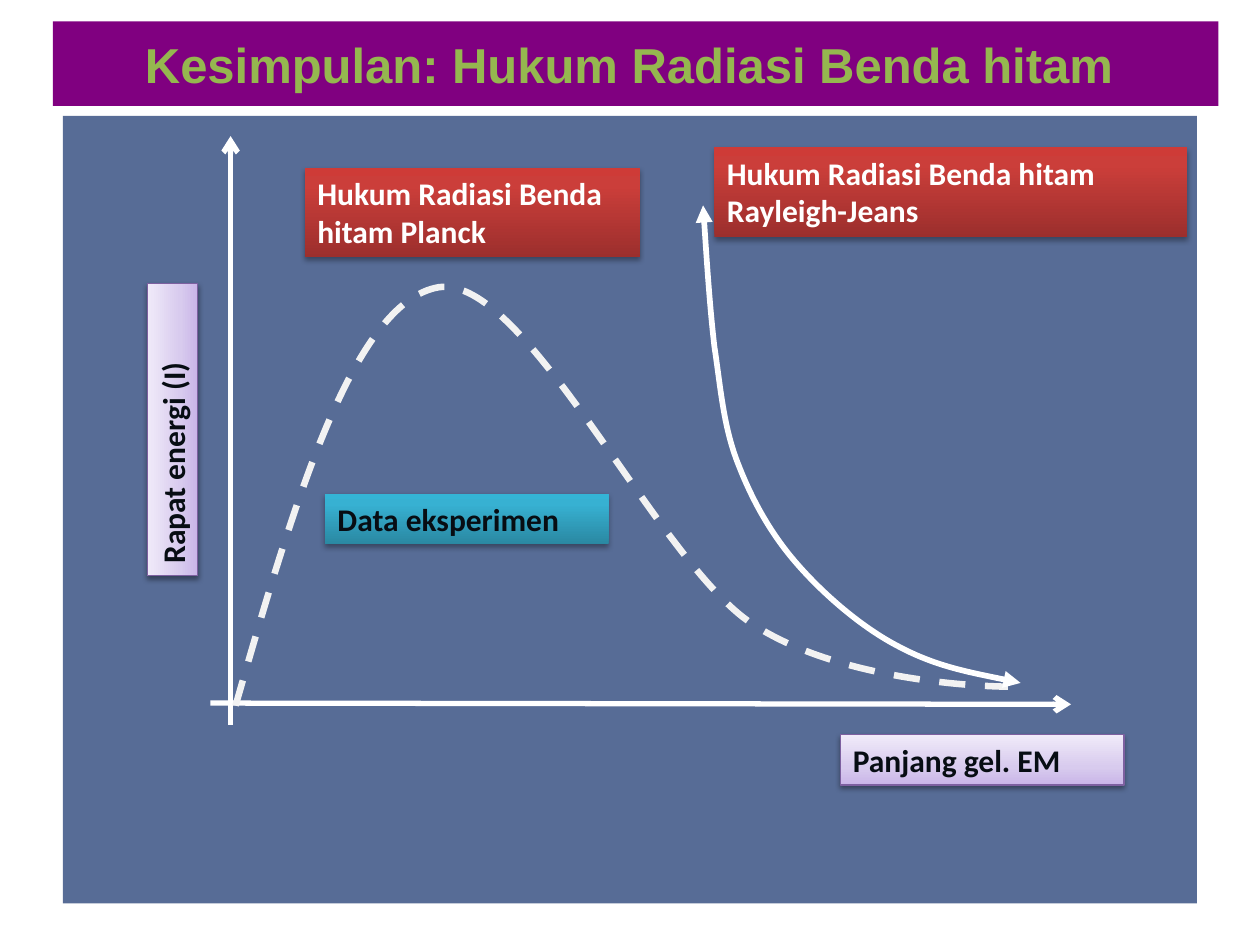
from pptx import Presentation, util as u
from pptx.dml.color import RGBColor
from pptx.enum import dml, shapes, text
from pptx.oxml.ns import qn
from lxml import etree

THEME = {
    "panel": "002060",
    "title_fill": "800080",
    "title_text": "95B74F",
    "white": "FFFFFF",
    "planck": "F2F2F2",
    "label_font": "Calibri",
    "title_font": "Arial",
    "label_size": 18,
    "title_size": 28,
}
RED = {"stops": [(0, "9C2F2D"), (80, "CB3E3A"), (100, "CE3B37")],
       "text": "FFFFFF", "outline": None, "shadow": (35, 1.8)}
TEAL = {"stops": [(0, "2A88A2"), (80, "37B1D2"), (100, "34B4D6")],
        "text": "070D13", "outline": None, "shadow": (35, 1.8)}
LILAC = {"stops": [(0, "C9B5E8"), (35, "D8CBEE"), (100, "F0EAF9")],
         "text": "070D13", "outline": "7D60A0", "shadow": (38, 1.6)}

TITLE = "Kesimpulan: Hukum Radiasi Benda hitam "
LABELS = [
    ("Hukum Radiasi Benda hitam Rayleigh-Jeans", (5.67, 1.17, 3.75, 0.71), RED, 0),
    ("Hukum Radiasi Benda hitam Planck", (2.42, 1.33, 2.66, 0.71), RED, 0),
    ("Data eksperimen", (2.58, 3.92, 2.25, 0.4), TEAL, 0),
    ("Panjang gel. EM", (6.67, 5.83, 2.25, 0.4), LILAC, 0),
    ("Rapat energi (I)", (0.21, 3.21, 2.32, 0.4), LILAC, 270),
]
AXES = [((1.67, 5.58), (8.5, 5.59)), ((1.83, 5.75), (1.83, 1.08))]
PLANCK_CURVE = (1.87, 5.6), [
    ((2.33, 4), (2.8, 2.4), (3.48, 2.28)),
    ((4.16, 2.17), (5.19, 4.4), (5.94, 4.93)),
    ((6.69, 5.45), (8, 5.45), (8, 5.45)),
]
RAYLEIGH_JEANS_CURVE = (8.1, 5.42), [
    ((7.77, 5.35), (7.43, 5.29), (7.13, 5.13)),
    ((6.84, 4.98), (6.54, 4.72), (6.33, 4.48)),
    ((6.11, 4.23), (5.96, 3.95), (5.85, 3.66)),
    ((5.74, 3.37), (5.72, 3.08), (5.67, 2.75)),
    ((5.63, 2.41), (5.58, 1.63), (5.58, 1.63)),
]


def rgb(color):
    return RGBColor.from_string(color)


def add_color(parent, color, alpha=None):
    element = etree.SubElement(parent, qn("a:srgbClr"), val=color)
    if alpha is not None:
        etree.SubElement(element, qn("a:alpha"), val=str(alpha * 1000))


def set_line(line, color, width, **ends):
    line.color.rgb = rgb(color)
    line.width = u.Pt(width)
    for end in ("headEnd", "tailEnd"):
        if end in ends:
            etree.SubElement(line._get_or_add_ln(), qn("a:" + end), type=ends[end])


def add_box(slide, place):
    shape = slide.shapes.add_shape(shapes.MSO_SHAPE.RECTANGLE, *map(u.Inches, place))
    shape.shadow.inherit = False
    shape.line.fill.background()
    return shape


def write(shape, content, font_name, size, color, alignment, anchor):
    frame = shape.text_frame
    frame.text = content
    frame.word_wrap = True
    frame.vertical_anchor = anchor
    paragraph = frame.paragraphs[0]
    paragraph.alignment = alignment
    font = paragraph.runs[0].font
    font.name, font.size, font.bold = font_name, u.Pt(size), True
    font.color.rgb = rgb(color)


def add_label(slide, content, place, style, rotation):
    shape = add_box(slide, place)
    shape.rotation = rotation
    shape.fill.gradient()
    shape.fill.gradient_angle = 90
    properties = shape._element.spPr
    stops = properties.find(".//" + qn("a:gsLst"))
    for stop in list(stops):
        stops.remove(stop)
    for position, color in style["stops"]:
        add_color(etree.SubElement(stops, qn("a:gs"), pos=str(position * 1000)), color)
    if style["outline"]:
        set_line(shape.line, style["outline"], 0.75)
    alpha, distance = style["shadow"]
    shadow = etree.SubElement(
        properties.find(qn("a:effectLst")), qn("a:outerShdw"),
        blurRad=str(u.Pt(3.1)), dist=str(u.Pt(distance)), dir="5400000", rotWithShape="0")
    add_color(shadow, "000000", alpha)
    write(shape, content, THEME["label_font"], THEME["label_size"], style["text"],
          text.PP_ALIGN.LEFT, text.MSO_ANCHOR.TOP)


def add_axis(slide, start, end):
    axis = slide.shapes.add_connector(
        shapes.MSO_CONNECTOR.STRAIGHT, *map(u.Inches, start + end))
    set_line(axis.line, THEME["white"], 3, tailEnd="arrow")
    etree.SubElement(axis._element.spPr, qn("a:effectLst"))


def add_curve(slide, start, segments):
    knots = [start] + [segment[-1] for segment in segments]
    left, top = (min(values) for values in zip(*knots))
    builder = slide.shapes.build_freeform(*map(u.Inches, start))
    builder.add_line_segments([tuple(map(u.Inches, knot)) for knot in knots[1:]], close=False)
    curve = builder.convert_to_shape()
    path = curve._element.spPr.find(".//" + qn("a:path"))
    path.set("fill", "none")
    for straight, segment in zip(path.findall(qn("a:lnTo")), segments):
        bezier = etree.Element(qn("a:cubicBezTo"))
        for x, y in segment:
            etree.SubElement(bezier, qn("a:pt"),
                             x=str(u.Inches(x - left)), y=str(u.Inches(y - top)))
        path.replace(straight, bezier)
    curve.fill.background()
    curve.shadow.inherit = False
    return curve


def main():
    presentation = Presentation()
    presentation.slide_width, presentation.slide_height = u.Inches(10), u.Inches(7.5)
    slide = presentation.slides.add_slide(presentation.slide_layouts[6])

    panel = add_box(slide, (0.5, 0.92, 9, 6.25))
    panel.fill.solid()
    panel.fill.fore_color.rgb = rgb(THEME["panel"])
    panel_color = panel._element.spPr.find(qn("a:solidFill")).find(qn("a:srgbClr"))
    etree.SubElement(panel_color, qn("a:alpha"), val="66000")

    for start, end in AXES:
        add_axis(slide, start, end)
    planck = add_curve(slide, *PLANCK_CURVE)
    set_line(planck.line, THEME["planck"], 3.75)
    planck.line.dash_style = dml.MSO_LINE.DASH
    rayleigh_jeans = add_curve(slide, *RAYLEIGH_JEANS_CURVE)
    set_line(rayleigh_jeans.line, THEME["white"], 3.25,
             headEnd="triangle", tailEnd="triangle")
    for label in LABELS:
        add_label(slide, *label)

    title = add_box(slide, (0.42, 0.17, 9.25, 0.67))
    title.fill.solid()
    title.fill.fore_color.rgb = rgb(THEME["title_fill"])
    write(title, TITLE, THEME["title_font"], THEME["title_size"], THEME["title_text"],
          text.PP_ALIGN.CENTER, text.MSO_ANCHOR.MIDDLE)
    presentation.save("out.pptx")


if __name__ == "__main__":
    main()
